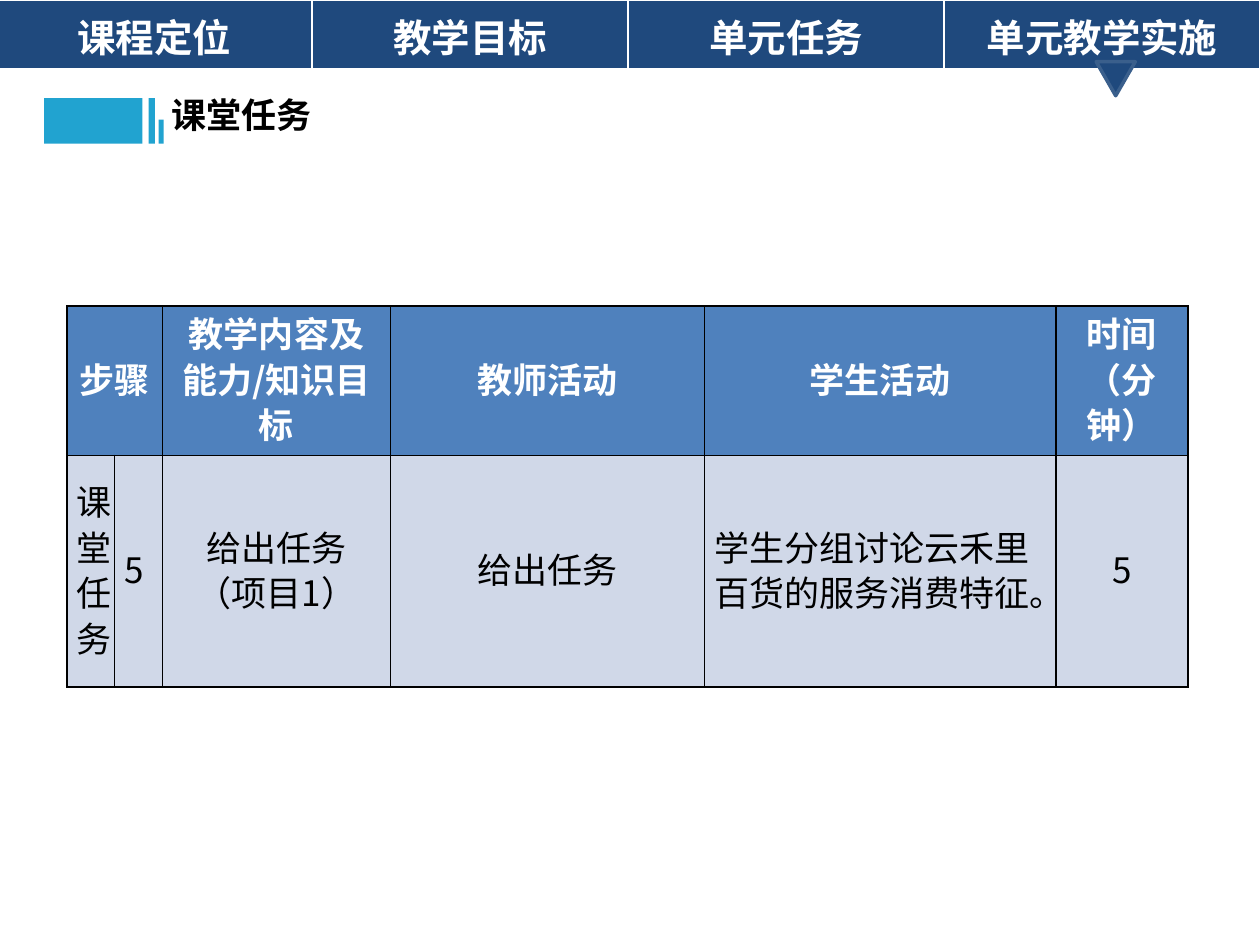
from lxml import etree
from pptx import Presentation
from pptx.dml.color import RGBColor
from pptx.enum.shapes import MSO_SHAPE
from pptx.enum.text import MSO_ANCHOR, MSO_AUTO_SIZE, PP_ALIGN
from pptx.oxml.ns import qn
from pptx.util import Inches, Pt

RECT, MERGE = MSO_SHAPE.RECTANGLE, MSO_SHAPE.FLOWCHART_MERGE
LEFT, CENTER = PP_ALIGN.LEFT, PP_ALIGN.CENTER
TOP, MIDDLE = MSO_ANCHOR.TOP, MSO_ANCHOR.MIDDLE
FIT = MSO_AUTO_SIZE.SHAPE_TO_FIT_TEXT

THEME = {
    "navy": "1F497D", "navy_line": "3A5F8C", "accent": "21A3D0",
    "head": "4F81BD", "body": "D0D8E8", "white": "FFFFFF", "black": "000000",
    "sans": "Noto Sans CJK SC", "serif": "Times New Roman",
    "nav_size": 22, "size": 20, "leading": 26,
}

prs = Presentation()
prs.slide_width, prs.slide_height = Inches(10), Inches(7.5)
COL, ROW = prs.slide_width / 100, prs.slide_height / 75
s = prs.slides.add_slide(prs.slide_layouts[6])


def write(tf, text, size, color, bold, align, font, leading=None):
    tf.text = text
    for p in tf.paragraphs:
        p.alignment = align
        if leading:
            p.line_spacing = Pt(leading)
        p.font.size, p.font.bold, p.font.name = Pt(size), bold, font
        p.font.color.rgb = RGBColor.from_string(THEME[color])
        props = p._p.pPr.find(qn("a:defRPr"))
        etree.SubElement(props, qn("a:ea"), typeface=THEME["sans"])


def style_cell(cell, fill, anchor, margin_x, margin_y, color, widths):
    cell.fill.solid()
    cell.fill.fore_color.rgb = RGBColor.from_string(THEME[fill])
    cell.vertical_anchor = anchor
    cell.margin_left = cell.margin_right = Inches(margin_x)
    cell.margin_top = cell.margin_bottom = Inches(margin_y)
    tcPr = cell._tc.get_or_add_tcPr()
    for i, (side, width) in enumerate(zip("LRTB", widths)):
        ln = etree.Element(qn(f"a:ln{side}"), w=str(Pt(width)))
        solid = etree.SubElement(ln, qn("a:solidFill"))
        etree.SubElement(solid, qn("a:srgbClr"), val=THEME[color])
        tcPr.insert(i, ln)


steps = [
    ["步骤", "", "教学内容及能力/知识目标", "教师活动", "学生活动", "时间\n（分钟）"],
    ["课堂任务", "5", "给出任务\n（项目1）", "给出任务", "学生分组讨论云禾里百货的服务消费特征。", "5"],
]
col_units = [3.8, 3.8, 18.1, 24.9, 27.9, 10.5]
row_units = [11.8, 18.4]
left_cols = (0, 1, 4)
tbl = s.shapes.add_table(2, 6, int(5.3 * COL), int(24.3 * ROW),
                         int(sum(col_units) * COL), int(sum(row_units) * ROW)).table
tbl.first_row = tbl.horz_banding = False
for c, units in enumerate(col_units):
    tbl.columns[c].width = int(units * COL)
for r, units in enumerate(row_units):
    tbl.rows[r].height = int(units * ROW)
    header = r == 0
    for c, text in enumerate(steps[r]):
        cell = tbl.cell(r, c)
        style_cell(cell, "head" if header else "body", MIDDLE, 0.08, 0.05, "black", (1, 1, 1, 1))
        write(cell.text_frame, text, THEME["size"], "white" if header else "black", header,
              LEFT if not header and c in left_cols else CENTER, THEME["sans"], THEME["leading"])
tbl.cell(0, 0).merge(tbl.cell(0, 1))

nav_items = ["课程定位", "教学目标", "单元任务", "单元教学实施"]
nav = s.shapes.add_table(1, 4, int(-0.3 * COL), 0, int(100.3 * COL), int(5.5 * ROW)).table
nav.first_row = nav.horz_banding = False
for c, text in enumerate(nav_items):
    nav.columns[c].width = int(100.3 / len(nav_items) * COL)
    style_cell(nav.cell(0, c), "navy", TOP, 0.1, 0.06, "white", (1, 1, 1, 3))
    write(nav.cell(0, c).text_frame, text, THEME["nav_size"], "white", True, CENTER, THEME["serif"])

sp = s.shapes.add_shape(MERGE, int(87 * COL), int(4.9 * ROW), int(3.1 * COL), int(2.7 * ROW))
sp.shadow.inherit = False
sp.fill.solid()
sp.fill.fore_color.rgb = RGBColor.from_string(THEME["navy"])
sp.line.color.rgb = RGBColor.from_string(THEME["navy_line"])
sp.line.width = Pt(2)

heading = s.shapes.add_group_shape()
bar_bottom = 11.4
for x, width, height in [(3.5, 7.8, 3.6), (11.8, 0.5, 3.6), (12.6, 0.4, 1.9)]:
    sp = heading.shapes.add_shape(RECT, int(x * COL), int((bar_bottom - height) * ROW),
                                  int(width * COL), int(height * ROW))
    sp.shadow.inherit = False
    sp.fill.solid()
    sp.fill.fore_color.rgb = RGBColor.from_string(THEME["accent"])
    sp.line.fill.background()

title = heading.shapes.add_textbox(int(12.6 * COL), int(6.9 * ROW), int(15.4 * COL), int(4.4 * ROW))
title.text_frame.word_wrap = True
title.text_frame.auto_size = FIT
write(title.text_frame, "课堂任务", THEME["size"], "black", True, LEFT, THEME["sans"])

prs.save("out.pptx")
